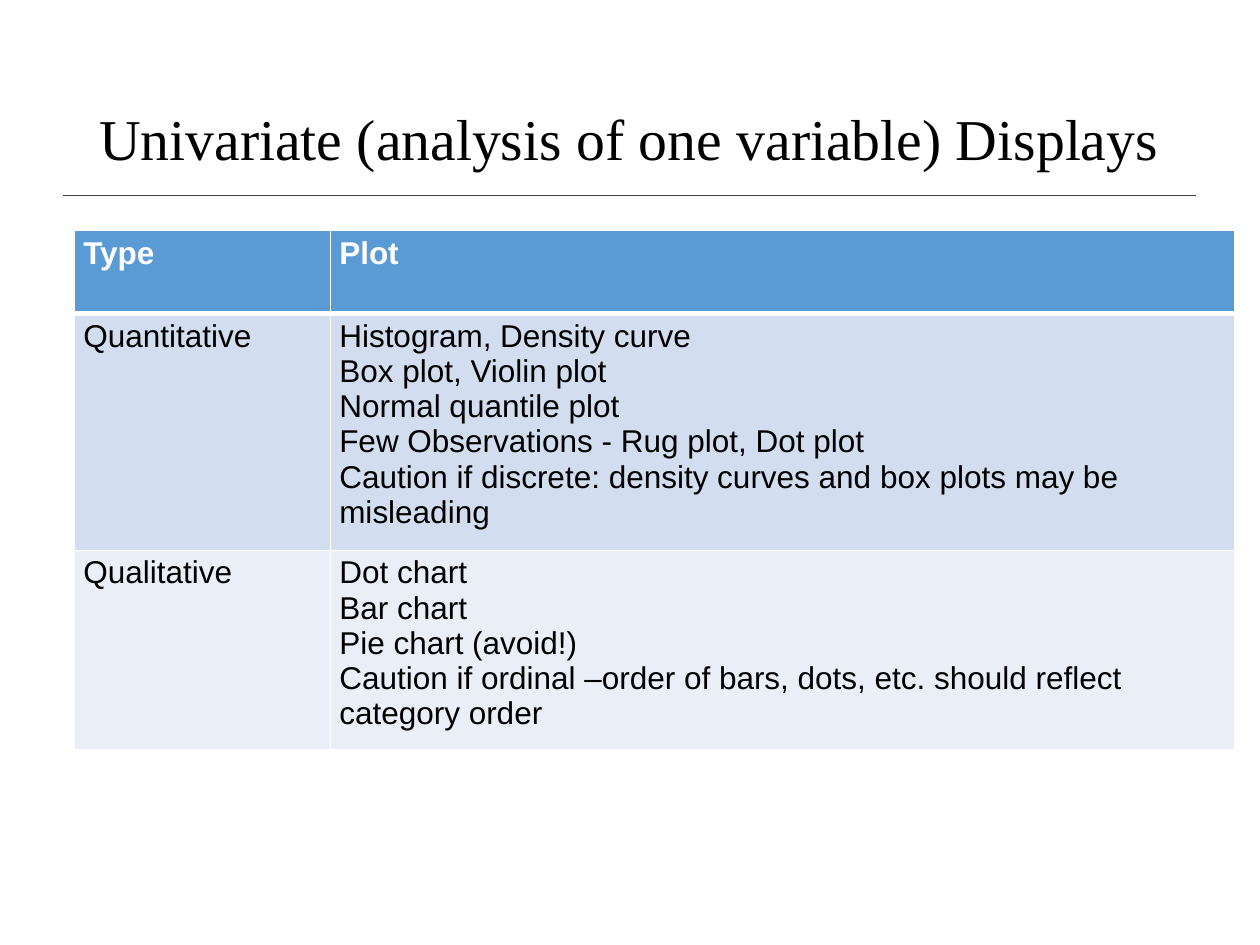
from lxml import etree
from pptx import Presentation
from pptx.dml.color import RGBColor
from pptx.enum.shapes import MSO_CONNECTOR as Link
from pptx.enum.text import MSO_ANCHOR as Anchor
from pptx.oxml import parse_xml
from pptx.oxml.ns import qn
from pptx.util import Cm, Pt

NS = 'xmlns:a="http://schemas.openxmlformats.org/drawingml/2006/main"'


def color(code):
    return RGBColor.from_string(code)


def put(frame, text, font="Arial", size=18, ink="000000", bold=False, space=None):
    """Write each line of text as one paragraph."""
    frame.word_wrap = True
    for i, line in enumerate(text.split("\n")):
        para = frame.paragraphs[0] if i == 0 else frame.add_paragraph()
        if space:
            para.line_spacing = space
        run = para.add_run()
        run.text = line
        run.font.name, run.font.size = font, Pt(size)
        run.font.bold = bold
        run.font.color.rgb = color(ink)


class Page:
    white = "FFFFFF"
    head = "5B9BD5"
    bands = ("D2DEEF", "EAEFF7")
    rule = "404040"
    serif = "Times New Roman"

    def __init__(self, slide):
        self.slide = slide
        slide.background.fill.solid()
        slide.background.fill.fore_color.rgb = color(self.white)

    def line(self, x1, y1, x2, y2):
        link = self.slide.shapes.add_connector(
            Link.STRAIGHT, Cm(x1), Cm(y1), Cm(x2), Cm(y2))
        link.line.color.rgb = color(self.rule)
        link.line.width = Pt(1)
        etree.SubElement(link.element.spPr, qn("a:effectLst"))

    def title(self, text, x, y, w, h):
        box = self.slide.shapes.add_textbox(Cm(x), Cm(y), Cm(w), Cm(h))
        frame = box.text_frame
        frame.vertical_anchor = Anchor.MIDDLE
        frame.margin_right = 0
        put(frame, text, font=self.serif, size=33, space=0.9)

    def cell(self, cell, text, row):
        cell.margin_left = cell.margin_right = Cm(0.18)
        cell.margin_top = cell.margin_bottom = Cm(0.1)
        # Borders come before the fill in the cell properties
        props = cell._tc.get_or_add_tcPr()
        thick = {"B": row == 0, "T": row == 1}
        for side in "LRTB":
            width = Pt(3 if thick.get(side) else 1)
            props.append(parse_xml(
                f'<a:ln{side} {NS} w="{width}"><a:solidFill>'
                f'<a:srgbClr val="{self.white}"/></a:solidFill></a:ln{side}>'))
        top = row == 0
        cell.fill.solid()
        cell.fill.fore_color.rgb = color(self.head if top else self.bands[(row - 1) % 2])
        put(cell.text_frame, text, ink=self.white if top else "000000", bold=top)

    def table(self, data, x, y, cols, rows):
        grid = self.slide.shapes.add_table(
            len(rows), len(cols), Cm(x), Cm(y), Cm(sum(cols)), Cm(sum(rows))).table
        for col, width in zip(grid.columns, cols):
            col.width = Cm(width)
        for r, (height, texts) in enumerate(zip(rows, data)):
            grid.rows[r].height = Cm(height)
            for c, text in enumerate(texts):
                self.cell(grid.cell(r, c), text, r)


PLOTS = [
    ("Type", "Plot"),
    ("Quantitative", """Histogram, Density curve
Box plot, Violin plot
Normal quantile plot
Few Observations - Rug plot, Dot plot
Caution if discrete: density curves and box plots may be misleading"""),
    ("Qualitative", """Dot chart
Bar chart
Pie chart (avoid!)
Caution if ordinal –order of bars, dots, etc. should reflect category order"""),
]


def main():
    deck = Presentation()
    deck.slide_width, deck.slide_height = Cm(25.4), Cm(19.05)
    page = Page(deck.slides.add_slide(deck.slide_layouts[6]))

    # Heading and rule
    page.line(1.27, 3.94, 24.1, 3.94)
    page.title("Univariate (analysis of one variable) Displays", 1.75, 1.02, 21.9, 3.68)

    # Plots by type of variable
    page.table(PLOTS, 1.5, 4.65, cols=(5.16, 18.24), rows=(1.67, 4.77, 3.6))

    deck.save("out.pptx")


if __name__ == "__main__":
    main()
